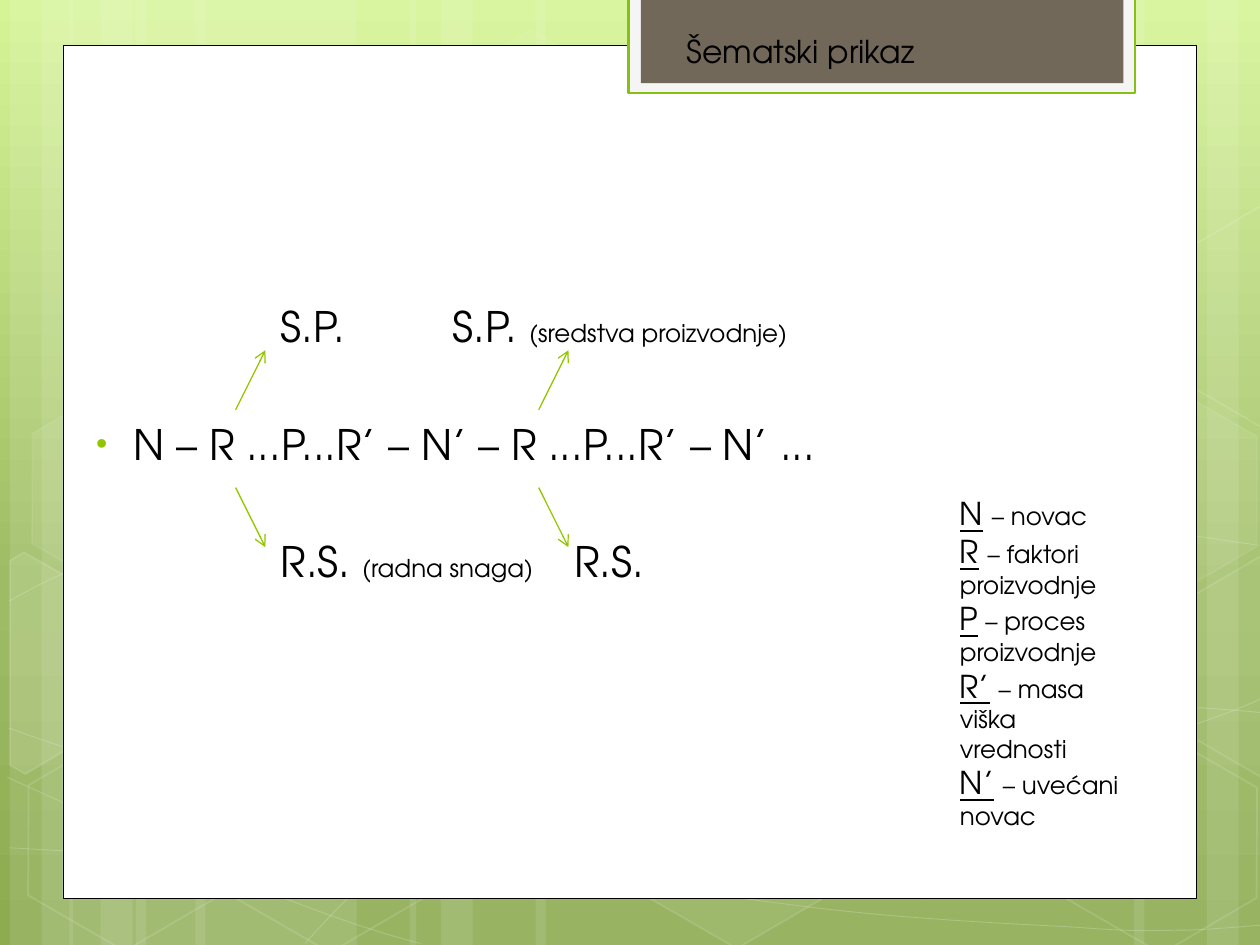
from copy import deepcopy
from itertools import product
from math import cos, radians, sin

from lxml.etree import SubElement as Sub
from pptx import Presentation
from pptx.dml.color import RGBColor
from pptx.enum.shapes import MSO_CONNECTOR as Conn, MSO_SHAPE as Kind
from pptx.enum.text import MSO_ANCHOR as Anchor, PP_ALIGN as Align
from pptx.oxml.ns import qn
from pptx.util import Cm, Pt

FONT = "TeX Gyre Adventor"
WIDE, HIGH, TURN = 25.4, 19.05, 30
SKY = [("D5F496", 0), ("9EBC63", 0.62), ("8DAC52", 1)]
BANDS = [(2.74, 4.45), (0.2, 1.27), (0.84, 2.11), (3.94, 4.45), (1.4, 1.27), (2.03, 2.11),
         (18.62, 4.45), (24.33, 1.27), (22.86, 2.11), (10.8, 7.82), (8.26, 1.27), (8.89, 2.11)]
CURVES = [
    [(0.18, 17.09), (1.55, 17.17), (2.92, 17.25), (4.83, 17.22), (6.73, 17.2), (9.09, 17.15),
     (11.63, 16.89), (14.17, 16.64), (17.78, 16.15), (20.12, 15.67), (22.43, 15.19),
     (24.82, 14.43), (25.58, 14)],
    [(0.18, 12.12), (0.91, 11.71), (1.65, 11.33), (3.07, 10.95), (4.52, 10.57), (6.58, 10.01),
     (8.81, 9.83), (11.07, 9.65), (13.82, 9.63), (16.61, 9.83), (19.41, 10.03),
     (24.05, 10.82), (25.58, 11.02)],
    [(0.15, 15.67), (3.23, 17.07), (6.27, 18.47), (8.48, 19.02)],
    [(0.18, 14.68), (0.97, 14.96), (1.78, 15.24), (3.25, 15.65), (4.72, 16.03), (6.93, 16.66),
     (9.07, 17.09), (11.18, 17.53), (13.84, 17.98), (15.95, 18.24), (18.06, 18.52),
     (20.32, 18.62), (21.67, 18.69), (22.99, 18.8), (23.34, 18.75), (24, 18.75),
     (24.66, 18.72), (25.12, 18.67), (25.58, 18.64)],
    [(6.15, 19.02), (6.6, 18.52), (7.06, 18.01), (7.67, 17.55), (8.28, 17.09), (9.14, 16.59),
     (9.86, 16.23), (10.57, 15.88), (11, 15.72), (11.94, 15.47), (12.85, 15.21),
     (14.55, 14.86), (15.44, 14.68), (16.36, 14.5), (16.48, 14.5), (17.27, 14.45),
     (18.06, 14.38), (19.3, 14.3), (20.17, 14.27), (21.06, 14.25), (22.5, 14.27),
     (22.5, 14.27), (23.07, 14.27), (23.64, 14.27), (24.21, 14.27), (24.66, 14.3),
     (25.1, 14.33), (25.55, 14.38)],
]
HEXES = [(8.48, 0.91, 4, 8), (12.62, 14.96, 6, 12), (0.28, 15.01, 0, 12), (0.36, 7.92, 7, 8),
         (4.42, 15.04, 0, 12), (19.13, 11.51, 10, 12), (21.18, 15.06, 0, 12),
         (21.18, 7.98, 7, 8)]
LEFT = [(0.2, 11.3), (0.48, 11.13), (2.44, 12.24), (2.41, 14.48), (0.51, 15.6), (0.2, 15.42)]
RIGHT = [(23.52, 12.32), (25.43, 11.2), (25.63, 11.33), (25.63, 15.57), (25.45, 15.67),
         (23.52, 14.55)]
SCHEME = [
    [("\tS.P.\tS.P. ", 24), ("(sredstva proizvodnje)", 14)],
    [("N – R ...P...R’ – N’ – R ...P...R’ – N’ ...", 24)],
    [("\tR.S. ", 24), ("(radna snaga)", 14), ("\tR.S.", 24)],
]
STOPS = {0: (3.91, 7.38), 2: (3.91, 9.83)}
KEYS = [("N", "novac"), ("R", "faktori proizvodnje"), ("P", "proces proizvodnje"),
        ("R’", "masa viška vrednosti"), ("N’", "uvećani novac")]


def assign(obj, **vals):
    """Set each named attribute on an object."""
    for name, val in vals.items():
        setattr(obj, name, val)


def shade(color):
    """Turn a hex string into a colour."""
    return RGBColor.from_string(color)


def tint(fill, color, alpha=100):
    """Make a fill solid, see-through when alpha is below 100, or empty at 0."""
    if not alpha:
        fill.background()
        return
    fill.solid()
    fill.fore_color.rgb = shade(color)
    if alpha < 100:
        node = fill._xPr.find(".//" + qn("a:srgbClr"))
        Sub(node, qn("a:alpha"), val=str(alpha * 1000))


def style(shape, fill=("FFFFFF", 0), line=("FFFFFF", 0), width=1):
    """Give a shape its fill and outline without a shadow."""
    shape.shadow.inherit = False
    tint(shape.fill, *fill)
    tint(shape.line.fill, *line)
    if line[1]:
        shape.line.width = Pt(width)


def block(slide, kind, box, **look):
    """Add a preset shape."""
    shape = slide.shapes.add_shape(kind, *map(Cm, box))
    style(shape, **look)
    return shape


def trace(slide, dots, close=False, **look):
    """Add an outline through the given points."""
    dots = [(Cm(x), Cm(y)) for x, y in dots]
    pen = slide.shapes.build_freeform(*dots[0])
    pen.add_line_segments(dots[1:], close=close)
    shape = pen.convert_to_shape()
    style(shape, **look)
    return shape


def bend(shape):
    """Join each three line segments of an outline into one cubic curve."""
    steps = list(shape._element.iter(qn("a:lnTo")))
    for trio in zip(*[iter(steps)] * 3):
        first = trio[0]
        first.tag = qn("a:cubicBezTo")
        for step in trio[1:]:
            first.append(step[0])
            step.getparent().remove(step)


def spin(dots, mid):
    """Turn points back about a centre."""
    c, s = cos(radians(TURN)), sin(radians(TURN))
    shifts = [(x - mid[0], y - mid[1]) for x, y in dots]
    return [(mid[0] + c * x + s * y, mid[1] - s * x + c * y) for x, y in shifts]


def write(para, text, size, **vals):
    """Add a run of text."""
    run = para.add_run()
    run.text = text
    assign(run.font, name=FONT, size=Pt(size), **vals)
    run.font.color.rgb = shade("000000")


def place(shape, box, **vals):
    """Move a text shape and format its frame."""
    assign(shape, **dict(zip(("left", "top", "width", "height"), map(Cm, box))))
    assign(shape.text_frame, word_wrap=True, vertical_anchor=Anchor.TOP, **vals)
    return shape.text_frame


def lines(frame, count):
    """Return the frame's paragraphs, grown to the count."""
    for _ in range(count - 1):
        frame.add_paragraph()
    return frame.paragraphs


def arrow(slide, start, end):
    """Add a thin green arrow."""
    line = slide.shapes.add_connector(Conn.STRAIGHT, *map(Cm, start + end))
    tint(line.line.fill, "94C600")
    line.line.width = Pt(0.75)
    Sub(line.line._get_or_add_ln(), qn("a:tailEnd"), type="arrow")
    Sub(line._element.spPr, qn("a:effectLst"))


def backdrop(slide):
    """Paint the gradient, bands, curves and hexagons."""
    fill = slide.background.fill
    fill.gradient()
    fill.gradient_angle = 270
    stops = fill._xPr.find(".//" + qn("a:gsLst"))
    stops.append(deepcopy(stops[-1]))
    for stop, (color, pos) in zip(fill.gradient_stops, SKY):
        stop.color.rgb = shade(color)
        stop.position = pos
    for left, width in BANDS:
        block(slide, Kind.RECTANGLE, (left, 0, width, HIGH), fill=("FFFFFF", 10))
    for dots in CURVES:
        bend(trace(slide, dots, line=("FFFFFF", 20), width=0.5))
    for left, top, alpha, edge in HEXES:
        cell = block(slide, Kind.HEXAGON, (left, top, 4.45, 3.86),
                     fill=("FFFFFF", alpha), line=("FFFFFF", edge))
        cell.rotation = TURN
        cell.adjustments[0] = 0.285
    upper = [(x, y - 7.06) for x, y in RIGHT]
    for dots, mid, alpha in ((LEFT, (0.91, 13.59), 10), (RIGHT, (25.02, 13.21), 4),
                             (upper, (25.02, 6.15), 0)):
        part = trace(slide, spin(dots, mid), True, fill=("FFFFFF", alpha),
                     line=("FFFFFF", 12))
        part.rotation = TURN


def panel(slide):
    """Add the white page and the title tab."""
    block(slide, Kind.RECTANGLE, (1.27, 0.91, 22.86, 17.2), fill=("FFFFFF", 100),
          line=("000000", 100), width=0.5)
    block(slide, Kind.RECTANGLE, (12.67, -0.05, 10.21, 1.93), fill=("F5F5F5", 100),
          line=("87C013", 100), width=1.25)
    block(slide, Kind.RECTANGLE, (12.92, -0.05, 9.73, 1.73), fill=("71685A", 100))


def heading(slide):
    """Fill the title and bring it to the front."""
    title = slide.shapes.title
    para = place(title, (13.59, 0.51, 8.41, 1.02)).paragraphs[0]
    para.alignment = Align.LEFT
    write(para, "Šematski prikaz", 18)
    slide.shapes._spTree.append(title._element)


def scheme(slide):
    """Write the circuit of capital with its branches and arrows."""
    box = (1.5, 4.75, 22.61, 9.6)
    frame = place(slide.shapes.add_textbox(0, 0, 0, 0), box, margin_top=Cm(1.31))
    for row, (para, runs) in enumerate(zip(lines(frame, len(SCHEME)), SCHEME)):
        para.space_before = Pt(38.4 if row else 0)
        props = para._p.get_or_add_pPr()
        if row in STOPS:
            tabs = Sub(props, qn("a:tabLst"))
            for stop in STOPS[row]:
                Sub(tabs, qn("a:tab"), pos=str(Cm(stop)), algn="l")
        else:
            props.set("marL", str(Cm(0.95)))
            props.set("indent", str(Cm(-0.76)))
            Sub(Sub(props, qn("a:buClr")), qn("a:srgbClr"), val="94C600")
            Sub(props, qn("a:buSzPct"), val="76000")
            Sub(props, qn("a:buFont"), typeface="Arial")
            Sub(props, qn("a:buChar"), char="•")
        for text, size in runs:
            write(para, text, size)
    for (y, tip), x in product(((8.26, 7.06), (9.83, 11.03)), (4.75, 10.86)):
        arrow(slide, (x, y), (x + 0.6, tip))


def legend(slide):
    """Explain the letters."""
    frame = place(slide.shapes.add_textbox(0, 0, 0, 0), (19.1, 9.84, 3.81, 7.09))
    for para, (key, text) in zip(lines(frame, len(KEYS)), KEYS):
        write(para, key, 18, underline=True)
        write(para, " ", 14 if key == "P" else 18)
        write(para, "– " + text, 14)


def main():
    """Build the slide and save it."""
    deck = Presentation()
    assign(deck, slide_width=Cm(WIDE), slide_height=Cm(HIGH))
    slide = deck.slides.add_slide(deck.slide_layouts[5])
    for draw in (backdrop, panel, scheme, legend, heading):
        draw(slide)
    deck.save("out.pptx")


if __name__ == "__main__":
    main()
